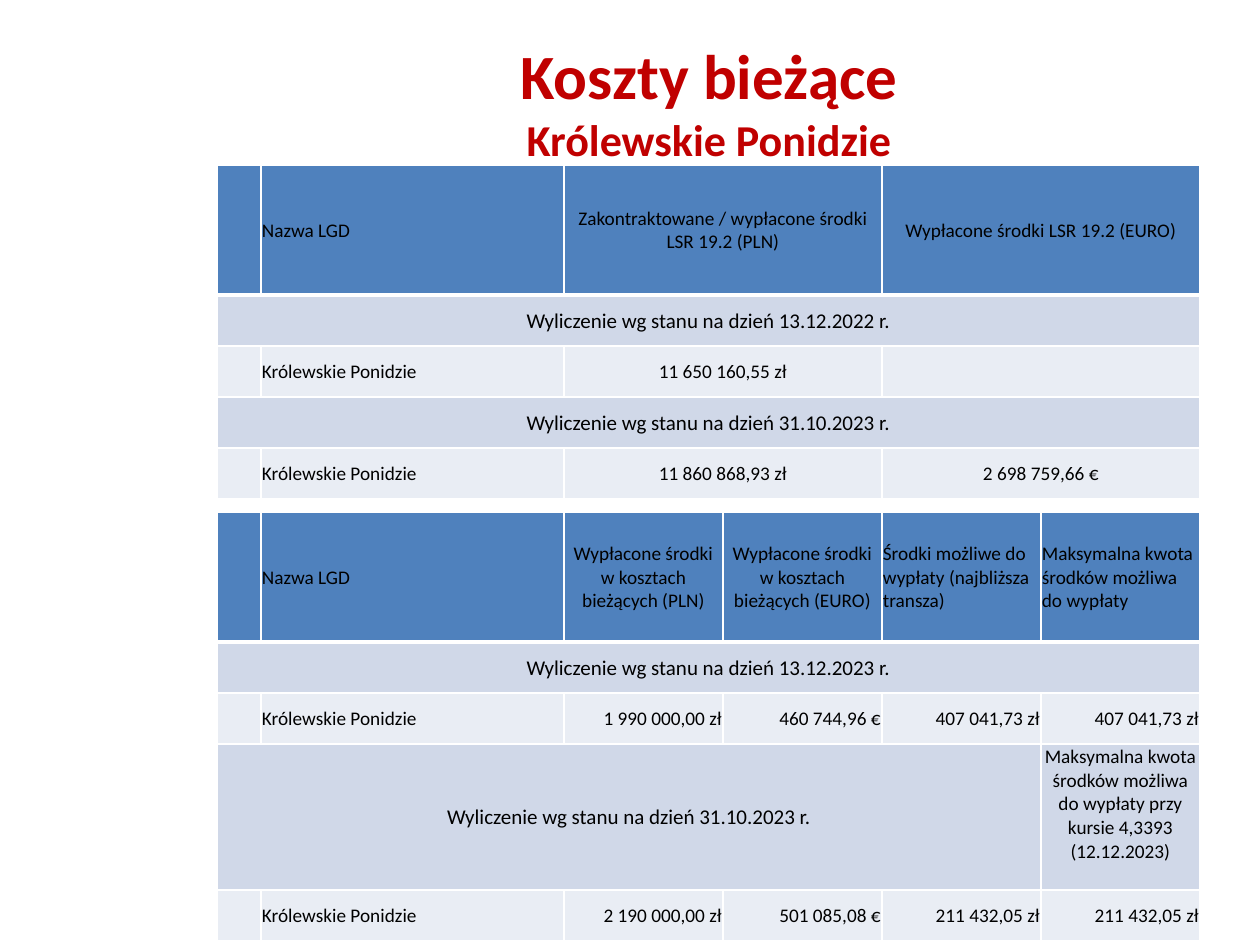
from dataclasses import dataclass

from lxml import etree
from pptx import Presentation
from pptx.dml.color import RGBColor
from pptx.enum.text import MSO_ANCHOR, MSO_AUTO_SIZE, PP_ALIGN
from pptx.oxml.ns import qn
from pptx.util import Emu, Pt

LEFT, CENTER, RIGHT = PP_ALIGN.LEFT, PP_ALIGN.CENTER, PP_ALIGN.RIGHT
TOP, MIDDLE, BOTTOM = MSO_ANCHOR.TOP, MSO_ANCHOR.MIDDLE, MSO_ANCHOR.BOTTOM
NO_FIT = MSO_AUTO_SIZE.NONE
EMU_PER_PX = 914400 / 126


def px(length):
    return Emu(round(length * EMU_PER_PX))


@dataclass(frozen=True)
class Theme:
    font: str = "Calibri"
    title: str = "C00000"
    text: str = "000000"
    border: str = "FFFFFF"
    header: str = "4F81BD"
    section: str = "D0D8E8"
    data: str = "E9EDF4"
    heading_size: float = 36
    subheading_size: float = 25.2
    section_size: float = 12
    cell_size: float = 11


@dataclass(frozen=True)
class Row:
    kind: str
    texts: tuple
    aligns: tuple
    height: int = 51


class Page:
    def __init__(self, deck, theme):
        self.theme = theme
        self.slide = deck.slides.add_slide(deck.slide_layouts[5])

    def style(self, span, size, color, bold=False):
        values = {"name": self.theme.font, "size": Pt(size), "bold": bold}
        for name, value in values.items():
            setattr(span.font, name, value)
        span.font.color.rgb = RGBColor.from_string(color)

    def title(self, left, top, width, height, heading, subheading):
        box = self.slide.shapes.title
        place = {"left": left, "top": top, "width": width, "height": height}
        for name, value in place.items():
            setattr(box, name, px(value))
        frame = box.text_frame
        layout = {"word_wrap": True, "auto_size": NO_FIT,
                  "vertical_anchor": BOTTOM, "margin_bottom": 0}
        for name, value in layout.items():
            setattr(frame, name, value)
        para = frame.paragraphs[0]
        para.alignment = CENTER
        span = para.add_run()
        span.text = heading
        self.style(span, self.theme.heading_size, self.theme.title, True)
        para.add_line_break()
        span = para.add_run()
        span.text = subheading
        self.style(span, self.theme.subheading_size, self.theme.title, True)

    def borders(self, cell, bottom):
        properties = cell._tc.get_or_add_tcPr()
        for side, points in {"L": 1, "R": 1, "T": 1, "B": bottom}.items():
            line = etree.SubElement(properties, qn(f"a:ln{side}"), w=str(Pt(points)))
            fill = etree.SubElement(line, qn("a:solidFill"))
            etree.SubElement(fill, qn("a:srgbClr"), val=self.theme.border)

    def cell(self, cell, text, align, size, anchor):
        values = {"vertical_anchor": anchor, "margin_left": px(1),
                  "margin_right": px(1), "margin_top": px(1), "margin_bottom": 0}
        for name, value in values.items():
            setattr(cell, name, value)
        if text:
            para = cell.text_frame.paragraphs[0]
            para.alignment = align
            span = para.add_run()
            span.text = text
            self.style(span, size, self.theme.text)

    def table(self, left, top, widths, rows):
        height = sum(row.height for row in rows)
        table = self.slide.shapes.add_table(
            len(rows), len(widths), px(left), px(top), px(sum(widths)), px(height)).table
        table.first_row = table.horz_banding = False
        for column, width in zip(table.columns, widths):
            column.width = px(width)
        for index, row in enumerate(rows):
            table.rows[index].height = px(row.height)
            for column in range(len(widths)):
                cell = table.cell(index, column)
                self.borders(cell, 3 if row.kind == "header" else 1)
                cell.fill.solid()
                cell.fill.fore_color.rgb = RGBColor.from_string(getattr(self.theme, row.kind))
            # The first text of a section row takes all columns left over
            spare = len(widths) - len(row.texts)
            if spare:
                table.cell(index, 0).merge(table.cell(index, spare))
            for position, (text, align) in enumerate(zip(row.texts, row.aligns)):
                section = row.kind == "section"
                size = self.theme.section_size if section and not position else self.theme.cell_size
                anchor = TOP if section and position else MIDDLE
                column = position + spare if position else 0
                self.cell(table.cell(index, column), text, align, size, anchor)


def header(texts, aligns):
    return Row("header", ("", "Nazwa LGD") + texts, (LEFT, LEFT) + aligns, 130)


def section(date, *notes, height=51):
    texts = (f"Wyliczenie wg stanu na dzień {date} r.",) + notes
    return Row("section", texts, (CENTER,) * len(texts), height)


def data(align, *amounts):
    return Row("data", ("", "Królewskie Ponidzie") + amounts,
               (LEFT, LEFT) + (align,) * len(amounts))


def main():
    deck = Presentation()
    deck.slide_width, deck.slide_height = px(1260), px(945)
    page = Page(deck, Theme())

    # Title
    page.title(168, 16, 1082, 149, "Koszty bieżące", "Królewskie Ponidzie")

    # Running costs
    page.table(217, 512, [44, 303] + [159] * 4, [
        header(("Wypłacone środki w kosztach bieżących (PLN)",
                "Wypłacone środki w kosztach bieżących (EURO)",
                "Środki możliwe do wypłaty (najbliższa transza)",
                "Maksymalna kwota środków możliwa do wypłaty"),
               (CENTER, CENTER, LEFT, LEFT)),
        section("13.12.2023"),
        data(RIGHT, "1 990 000,00 zł", "460 744,96 €", "407 041,73 zł", "407 041,73 zł"),
        section("31.10.2023",
                "Maksymalna kwota środków możliwa do wypłaty przy kursie 4,3393 (12.12.2023)",
                height=146),
        data(RIGHT, "2 190 000,00 zł", "501 085,08 €", "211 432,05 zł", "211 432,05 zł"),
    ])

    # Contracted and paid funds
    page.table(217, 165, [44, 303] + [318] * 2, [
        header(("Zakontraktowane / wypłacone środki LSR 19.2 (PLN)",
                "Wypłacone środki LSR 19.2 (EURO)"), (CENTER, CENTER)),
        section("13.12.2022"),
        data(CENTER, "11 650 160,55 zł", ""),
        section("31.10.2023"),
        data(CENTER, "11 860 868,93 zł", "2 698 759,66 €"),
    ])

    deck.save("out.pptx")


if __name__ == "__main__":
    main()
